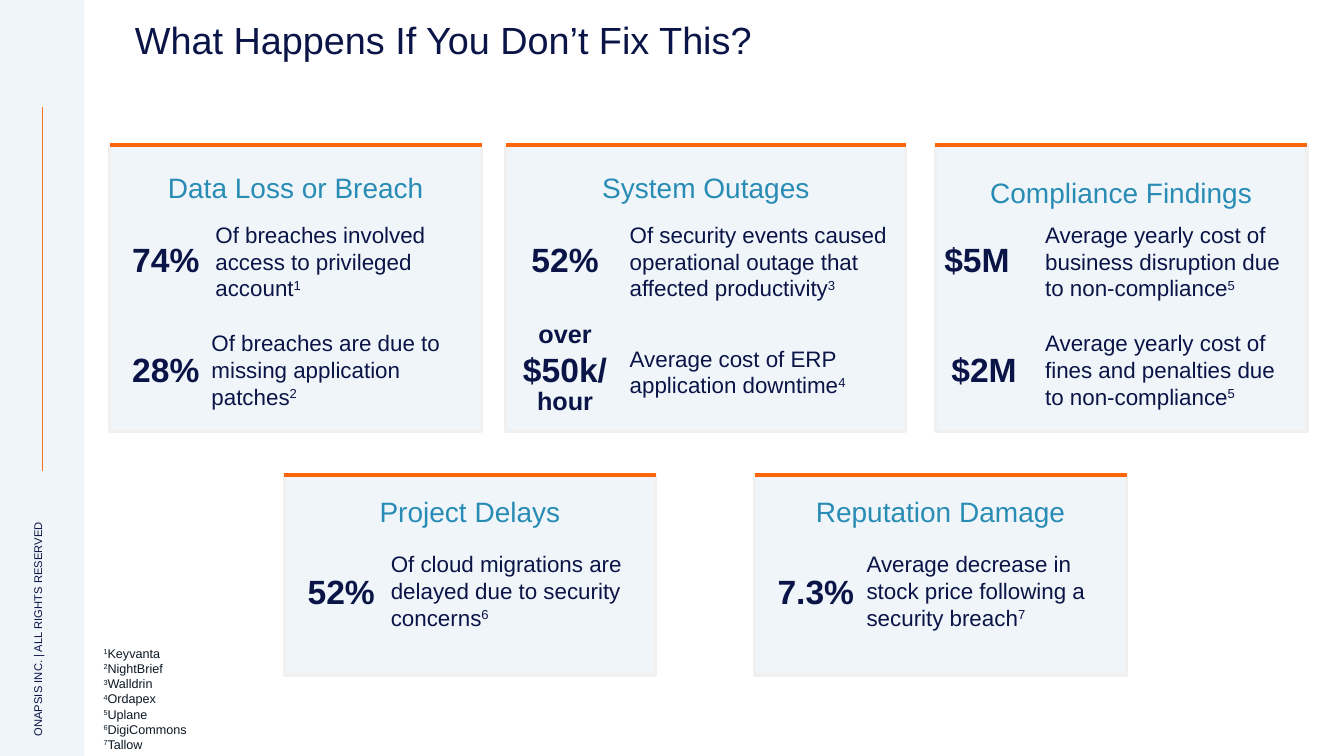
from lxml.etree import SubElement
from pptx import Presentation
from pptx.dml.color import RGBColor
from pptx.enum.shapes import MSO_CONNECTOR as Connector, MSO_SHAPE as Shape
from pptx.enum.text import MSO_ANCHOR as Anchor, PP_ALIGN as Align
from pptx.oxml.ns import qn
from pptx.util import Cm, Pt

NAVY = RGBColor(0x0A, 0x14, 0x46)
BLUE = RGBColor(0x28, 0x8C, 0xB4)
PALE = RGBColor(0xF0, 0xF5, 0xFA)
BORDER = RGBColor(0xF0, 0xF0, 0xF0)
ORANGE = RGBColor(0xFE, 0x66, 0x0C)
SIDE_ORANGE = RGBColor(0xF5, 0x73, 0x23)
INK = RGBColor(0x0C, 0x18, 0x24)
STAT_WIDTH = 6.22


def add_rule(x1, y1, x2, y2, color, weight):
    """Draw a straight orange rule without a shadow."""
    rule = slide.shapes.add_connector(Connector.STRAIGHT, Cm(x1), Cm(y1), Cm(x2), Cm(y2))
    rule.line.color.rgb = color
    rule.line.width = Pt(weight)
    SubElement(rule._element.spPr, qn("a:effectLst"))


def add_text(left, top, width, height, text, size, color=NAVY, bold=False, align=Align.LEFT):
    box = slide.shapes.add_textbox(Cm(left), Cm(top), Cm(width), Cm(height))
    box.text_frame.word_wrap = True
    box.text_frame.text = text
    for paragraph in box.text_frame.paragraphs:
        paragraph.alignment = align
        paragraph.font.name = "Arial"
        paragraph.font.size = Pt(size)
        paragraph.font.bold = bold
        paragraph.font.color.rgb = color
    return box


presentation = Presentation()
presentation.slide_width = Cm(33.87)
presentation.slide_height = Cm(19.05)
slide = presentation.slides.add_slide(presentation.slide_layouts[6])

# Sidebar
sidebar = slide.shapes.add_shape(Shape.RECTANGLE, 0, 0, Cm(2.13), Cm(19.05))
sidebar.shadow.inherit = False
sidebar.fill.solid()
sidebar.fill.fore_color.rgb = PALE
sidebar.line.fill.background()
add_rule(1.07, 2.69, 1.07, 11.86, SIDE_ORANGE, 0.75)
rights = add_text(-3.76, 13.61, 9.65, 0.74, "ONAPSIS INC. | ALL RIGHTS RESERVED", 8)
rights.rotation = 270
rights.text_frame.paragraphs[0].line_spacing = 0.9

# Title
title = add_text(3.4, 0.41, 28.9, 1.75, "What Happens If You Don’t Fix This?", 27)
title.text_frame.margin_left = title.text_frame.margin_top = 0

# Cards: left, top, width, height, heading, space above heading
cards = [
    (2.77, 3.66, 9.37, 7.21, "Data Loss or Breach", 0.64),
    (12.75, 3.66, 10.08, 7.21, "System Outages", 0.64),
    (23.57, 3.66, 9.37, 7.21, "Compliance Findings", 0.76),
    (7.16, 11.96, 9.37, 5.05, "Project Delays", 0.5),
    (19.02, 11.96, 9.37, 5.05, "Reputation Damage", 0.5),
]
for left, top, width, height, heading, space in cards:
    card = slide.shapes.add_shape(Shape.RECTANGLE, Cm(left), Cm(top), Cm(width), Cm(height))
    card.shadow.inherit = False
    card.fill.solid()
    card.fill.fore_color.rgb = PALE
    card.line.color.rgb = BORDER
    card.line.width = Pt(2.25)
    frame = card.text_frame
    frame.vertical_anchor = Anchor.TOP
    frame.margin_top = Cm(space)
    frame.text = heading
    paragraph = frame.paragraphs[0]
    paragraph.alignment = Align.CENTER
    paragraph.font.name = "Arial"
    paragraph.font.size = Pt(20)
    paragraph.font.color.rgb = BLUE
    add_rule(left, top, left + width, top, ORANGE, 3)

# Key figures: left, top, text, size
figures = [
    (1.07, 5.89, "74%", 24),
    (1.07, 8.66, "28%", 24),
    (11.13, 5.89, "52%", 24),
    (11.13, 7.9, "over", 18),
    (11.13, 8.66, "$50k/", 24),
    (11.13, 9.58, "hour", 18),
    (21.51, 5.89, "$5M", 24),
    (21.69, 8.66, "$2M", 24),
    (5.49, 14.27, "52%", 24),
    (17.45, 14.27, "7.3%", 24),
]
for left, top, figure, size in figures:
    add_text(left, top, STAT_WIDTH, 1.27, figure, size, bold=True, align=Align.CENTER)

# Explanations: left, top, width, text, footnote number
explanations = [
    (5.18, 5.44, 7.09, "Of breaches involved access to privileged account", "1"),
    (5.08, 8.18, 7.47, "Of breaches are due to missing application patches", "2"),
    (15.62, 5.44, 8.05,
     "Of security events caused operational outage that affected productivity", "3"),
    (15.62, 8.56, 7.72, "Average cost of ERP application downtime", "4"),
    (26.09, 5.44, 7.72,
     "Average yearly cost of business disruption due \vto non-compliance", "5"),
    (26.09, 8.18, 6.73,
     "Average yearly cost of fines and penalties due to non-compliance", "5"),
    (9.6, 13.74, 8.28, "Of cloud migrations are delayed due to security concerns", "6"),
    (21.59, 13.74, 6.81,
     "Average decrease in stock price following a security breach", "7"),
]
for left, top, width, text, number in explanations:
    box = add_text(left, top, width, 2.31, text, 16)
    mark = box.text_frame.paragraphs[0].add_run()
    mark.text = number
    mark.font._element.set("baseline", "30000")

# Footnotes
sources = ["Keyvanta", "NightBrief", "Walldrin", "Ordapex", "Uplane", "DigiCommons", "Tallow"]
numbers = "\n".join(str(number) for number in range(1, len(sources) + 1))
footnotes = add_text(2.36, 16.15, 31.45, 3.33, numbers, 9, INK)
for paragraph, source in zip(footnotes.text_frame.paragraphs, sources):
    paragraph.runs[0].font._element.set("baseline", "30000")
    paragraph.add_run().text = source

presentation.save("out.pptx")
